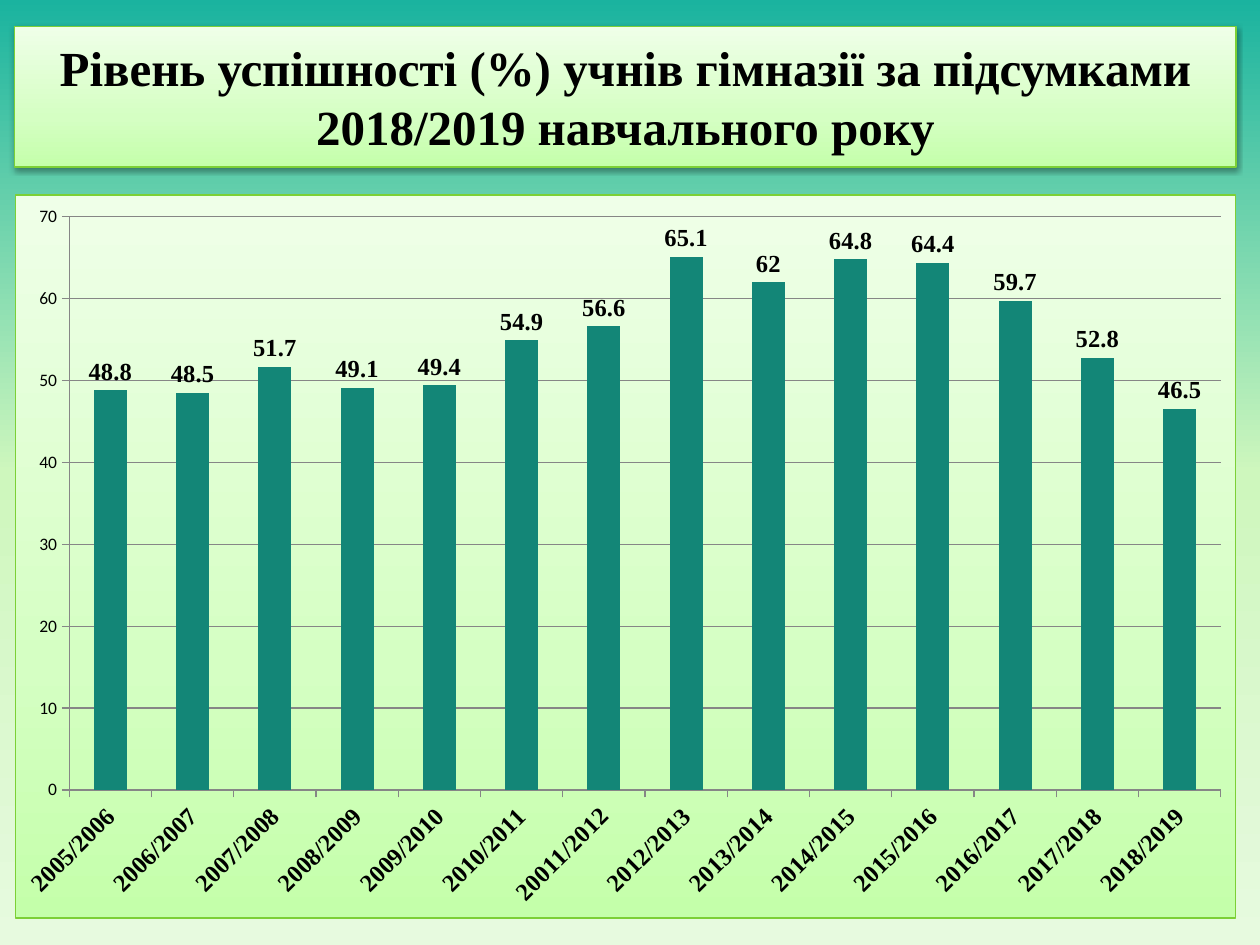
"""Build a slide with a column chart of pupils' success rate by school year."""
from lxml.etree import SubElement
from pptx import Presentation
from pptx.chart.data import CategoryChartData
from pptx.dml.color import RGBColor
from pptx.enum.chart import XL_CHART_TYPE, XL_LABEL_POSITION, XL_TICK_MARK
from pptx.enum.shapes import MSO_SHAPE
from pptx.enum.text import MSO_ANCHOR, PP_ALIGN
from pptx.oxml import parse_xml
from pptx.oxml.ns import nsdecls, qn
from pptx.util import Cm, Pt

HEADING = "Рівень успішності (%) учнів гімназії за підсумками 2018/2019 навчального року"
SUCCESS = [
    ("2005/2006", 48.8), ("2006/2007", 48.5), ("2007/2008", 51.7),
    ("2008/2009", 49.1), ("2009/2010", 49.4), ("2010/2011", 54.9),
    ("20011/2012", 56.6), ("2012/2013", 65.1), ("2013/2014", 62),
    ("2014/2015", 64.8), ("2015/2016", 64.4), ("2016/2017", 59.7),
    ("2017/2018", 52.8), ("2018/2019", 46.5),
]
SKY = [(0, "1AB39F"), (50, "CEF7BD"), (100, "E7FADF")]
PANEL = [(0, "C4FFAA"), (35, "D5FFC3"), (100, "EFFFE8")]
BORDER, BAR, INK, GRID = "7CD036", "138677", "000000", "868686"
PLOT = {"x": 0.044, "y": 0.03, "w": 0.944, "h": 0.793}
LEFT, WIDTH = Cm(0.3), Cm(24.62)
SERIF = "Times New Roman"


def color(value):
    return RGBColor.from_string(value)


def gradient(stops, angle):
    marks = "".join(
        f'<a:gs pos="{position * 1000}"><a:srgbClr val="{value}"/></a:gs>'
        for position, value in stops
    )
    return parse_xml(
        f'<a:gradFill {nsdecls("a")} rotWithShape="1"><a:gsLst>{marks}</a:gsLst>'
        f'<a:lin ang="{angle * 60000}" scaled="0"/></a:gradFill>'
    )


def fill_gradient(fill, owner, stops, angle):
    fill.gradient()
    plain = next(owner.iter(qn("a:gradFill")))
    plain.getparent().replace(plain, gradient(stops, angle))


def style(font, size, name=SERIF, bold=True):
    font.size, font.name, font.bold = Pt(size), name, bold
    font.color.rgb = color(INK)


def outline(line, value):
    line.color.rgb, line.width = color(value), Pt(0.75)


def add_heading(slide):
    heading = slide.shapes.add_shape(MSO_SHAPE.RECTANGLE, LEFT, Cm(0.53), WIDTH, Cm(2.84))
    fill_gradient(heading.fill, heading._element, PANEL, 270)
    outline(heading.line, BORDER)
    heading.shadow.inherit = False
    effects = heading._element.spPr.find(qn("a:effectLst"))
    shadow = SubElement(effects, qn("a:outerShdw"), blurRad="40000", dist="20000",
                        dir="5400000", rotWithShape="0")
    shade = SubElement(shadow, qn("a:srgbClr"), val=INK)
    SubElement(shade, qn("a:alpha"), val="38000")
    frame = heading.text_frame
    frame.text = HEADING
    frame.word_wrap = True
    frame.vertical_anchor = MSO_ANCHOR.MIDDLE
    frame.paragraphs[0].alignment = PP_ALIGN.CENTER
    style(frame.paragraphs[0].runs[0].font, 28)


def add_success_chart(slide):
    data = CategoryChartData()
    data.categories = [year for year, _ in SUCCESS]
    data.add_series("Series 1", [rate for _, rate in SUCCESS])
    chart = slide.shapes.add_chart(
        XL_CHART_TYPE.COLUMN_CLUSTERED, LEFT, Cm(3.92), WIDTH, Cm(14.6), data
    ).chart
    chart.has_title = chart.has_legend = False
    style(chart.font, 10, "Calibri", False)

    columns = chart.plots[0]
    columns.gap_width = 150
    columns.vary_by_categories = False
    bars = columns.series[0].format.fill
    bars.solid()
    bars.fore_color.rgb = color(BAR)
    columns.has_data_labels = True
    labels = columns.data_labels
    labels.show_value = True
    labels.position = XL_LABEL_POSITION.OUTSIDE_END
    style(labels.font, 14)

    years, rates = chart.category_axis, chart.value_axis
    style(years.tick_labels.font, 14)
    rates.has_major_gridlines = True
    for axis in (years, rates):
        axis.major_tick_mark = XL_TICK_MARK.OUTSIDE
        outline(axis.format.line, GRID)
    outline(rates.major_gridlines.format.line, GRID)

    area = parse_xml(
        f'<c:spPr {nsdecls("c", "a")}><a:ln w="9525"><a:solidFill>'
        f'<a:srgbClr val="{BORDER}"/></a:solidFill></a:ln></c:spPr>'
    )
    area.insert(0, gradient(PANEL, 270))
    body = chart._chartSpace.find(qn("c:chart"))
    body.addnext(area)

    plot_area = body.find(qn("c:plotArea"))
    for old in plot_area.findall(qn("c:layout")):
        plot_area.remove(old)
    modes = '<c:layoutTarget val="inner"/><c:xMode val="edge"/><c:yMode val="edge"/>'
    sizes = "".join(f'<c:{side} val="{share}"/>' for side, share in PLOT.items())
    plot_area.insert(0, parse_xml(
        f'<c:layout {nsdecls("c")}><c:manualLayout>{modes}{sizes}</c:manualLayout></c:layout>'
    ))


def main():
    deck = Presentation()
    deck.slide_width, deck.slide_height = Cm(25.4), Cm(19.05)
    slide = deck.slides.add_slide(deck.slide_layouts[6])
    fill_gradient(slide.background.fill, slide._element, SKY, 90)
    add_heading(slide)
    add_success_chart(slide)
    deck.save("out.pptx")


if __name__ == "__main__":
    main()
